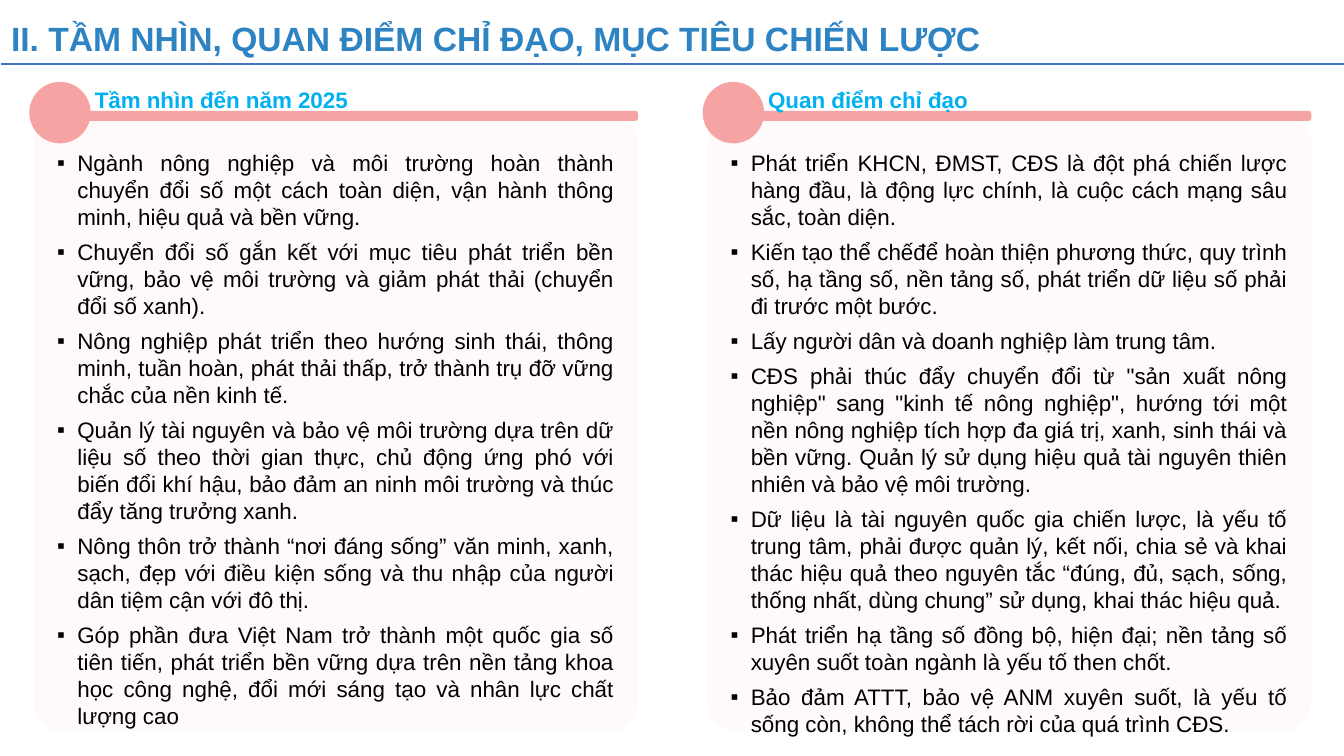
from lxml import etree
from pptx import Presentation
from pptx.dml.color import RGBColor
from pptx.enum.shapes import MSO_CONNECTOR, MSO_SHAPE
from pptx.enum.text import MSO_ANCHOR, MSO_AUTO_SIZE, PP_ALIGN
from pptx.oxml.ns import qn
from pptx.util import Pt

ROUNDED, OVAL = MSO_SHAPE.ROUNDED_RECTANGLE, MSO_SHAPE.OVAL
STRAIGHT = MSO_CONNECTOR.STRAIGHT
MIDDLE, TOP = MSO_ANCHOR.MIDDLE, MSO_ANCHOR.TOP
LEFT, JUSTIFY = PP_ALIGN.LEFT, PP_ALIGN.JUSTIFY
FIXED, GROW = MSO_AUTO_SIZE.NONE, MSO_AUTO_SIZE.SHAPE_TO_FIT_TEXT

COLORS = {
    "title": "2E83C3",
    "rule": "4472C4",
    "panel": "FFFAFA",
    "accent": "F5A3A3",
    "heading": "00B0F0",
    "body": "000000",
}
FONTS = {
    "title": {"name": "Arial", "size": Pt(24), "bold": True},
    "heading": {"name": "Arial", "size": Pt(16), "bold": True},
    "body": {"name": "Arial", "size": Pt(16), "bold": False},
}
NO_MARGINS = dict.fromkeys(("margin_left", "margin_top", "margin_right", "margin_bottom"), 0)

SLIDE_WIDTH, SLIDE_HEIGHT = 960, 540
TITLE = "II. TẦM NHÌN, QUAN ĐIỂM CHỈ ĐẠO, MỤC TIÊU CHIẾN LƯỢC"
COLUMN_LEFT, COLUMN_TOP, COLUMN_WIDTH, COLUMN_HEIGHT = 20.9, 58.5, 434.9, 464.2
COLUMN_STEP = 481
COLUMNS = [
    ("Tầm nhìn đến năm 2025", [
        "Ngành nông nghiệp và môi trường hoàn thành chuyển đổi số một cách toàn diện, vận hành thông minh, hiệu quả và bền vững.",
        "Chuyển đổi số gắn kết với mục tiêu phát triển bền vững, bảo vệ môi trường và giảm phát thải (chuyển đổi số xanh).",
        "Nông nghiệp phát triển theo hướng sinh thái, thông minh, tuần hoàn, phát thải thấp, trở thành trụ đỡ vững chắc của nền kinh tế.",
        "Quản lý tài nguyên và bảo vệ môi trường dựa trên dữ liệu số theo thời gian thực, chủ động ứng phó với biến đổi khí hậu, bảo đảm an ninh môi trường và thúc đẩy tăng trưởng xanh.",
        "Nông thôn trở thành “nơi đáng sống” văn minh, xanh, sạch, đẹp với điều kiện sống và thu nhập của người dân tiệm cận với đô thị.",
        "Góp phần đưa Việt Nam trở thành một quốc gia số tiên tiến, phát triển bền vững dựa trên nền tảng khoa học công nghệ, đổi mới sáng tạo và nhân lực chất lượng cao",
    ]),
    ("Quan điểm chỉ đạo", [
        "Phát triển KHCN, ĐMST, CĐS là đột phá chiến lược hàng đầu, là động lực chính, là cuộc cách mạng sâu sắc, toàn diện.",
        "Kiến tạo thể chếđể hoàn thiện phương thức, quy trình số, hạ tầng số, nền tảng số, phát triển dữ liệu số phải đi trước một bước.",
        "Lấy người dân và doanh nghiệp làm trung tâm.",
        "CĐS phải thúc đẩy chuyển đổi từ \"sản xuất nông nghiệp\" sang \"kinh tế nông nghiệp\", hướng tới một nền nông nghiệp tích hợp đa giá trị, xanh, sinh thái và bền vững. Quản lý sử dụng hiệu quả tài nguyên thiên nhiên và bảo vệ môi trường.",
        "Dữ liệu là tài nguyên quốc gia chiến lược, là yếu tố trung tâm, phải được quản lý, kết nối, chia sẻ và khai thác hiệu quả theo nguyên tắc “đúng, đủ, sạch, sống, thống nhất, dùng chung” sử dụng, khai thác hiệu quả.",
        "Phát triển hạ tầng số đồng bộ, hiện đại; nền tảng số xuyên suốt toàn ngành là yếu tố then chốt.",
        "Bảo đảm ATTT, bảo vệ ANM xuyên suốt, là yếu tố sống còn, không thể tách rời của quá trình CĐS.",
    ]),
]


def set_values(target, values):
    for name, value in values.items():
        setattr(target, name, value)


def write_paragraph(paragraph, text, style, **layout):
    paragraph.text = text
    set_values(paragraph, layout)
    set_values(paragraph.font, FONTS[style])
    paragraph.font.color.rgb = RGBColor.from_string(COLORS[style])


def add_bullet(paragraph):
    properties = paragraph._p.get_or_add_pPr()
    properties.set("marL", str(Pt(14.4)))
    properties.set("indent", str(-Pt(14.4)))
    etree.SubElement(properties, qn("a:buFont")).set("typeface", "Arial")
    etree.SubElement(properties, qn("a:buChar")).set("char", "▪")


def add_filled(slide, kind, color, left, top, width, height, rounding=None):
    shape = slide.shapes.add_shape(kind, Pt(left), Pt(top), Pt(width), Pt(height))
    shape.shadow.inherit = False
    shape.fill.solid()
    shape.fill.fore_color.rgb = RGBColor.from_string(COLORS[color])
    shape.line.fill.background()
    if rounding is not None:
        shape.adjustments[0] = rounding


def add_text_frame(slide, left, top, width, height, **settings):
    box = slide.shapes.add_textbox(Pt(left), Pt(top), Pt(width), Pt(height))
    set_values(box.text_frame, {"word_wrap": True, "vertical_anchor": TOP, **settings})
    return box.text_frame


def add_header(slide, left, top, width, height):
    title = slide.shapes.title
    set_values(title, {"left": Pt(left), "top": Pt(top), "width": Pt(898), "height": Pt(height)})
    set_values(title.text_frame, {"vertical_anchor": MIDDLE, "word_wrap": True, "auto_size": FIXED})
    write_paragraph(title.text_frame.paragraphs[0], TITLE, "title", alignment=LEFT, line_spacing=0.9)
    rule_top = Pt(top + height + 0.7)
    rule = slide.shapes.add_connector(STRAIGHT, Pt(left), rule_top, Pt(left + width), rule_top)
    rule.line.color.rgb = RGBColor.from_string(COLORS["rule"])
    rule.line.width = Pt(1.5)
    etree.SubElement(rule._element.spPr, qn("a:effectLst"))


def add_column(slide, heading, points, left, top, width, height):
    panel_left, panel_width = left + 2.9, width - 2.9
    add_filled(slide, ROUNDED, "panel", panel_left, top + 22.9, panel_width, height - 22.9, 0.05)
    add_filled(slide, ROUNDED, "accent", panel_left, top + 20.7, panel_width, 7.2, 0.3)
    add_filled(slide, OVAL, "accent", left, top, 43.9, 43.9)

    heading_frame = add_text_frame(slide, left + 46.8, top + 1.3, 220, 21.6, **NO_MARGINS)
    write_paragraph(heading_frame.paragraphs[0], heading, "heading", alignment=LEFT, line_spacing=Pt(21))

    body = add_text_frame(slide, left + 12.9, top + 44.5, 411.8, height - 38, auto_size=GROW)
    for index, point in enumerate(points):
        paragraph = body.add_paragraph() if index else body.paragraphs[0]
        add_bullet(paragraph)
        write_paragraph(paragraph, point, "body", alignment=JUSTIFY, space_before=Pt(6 if index else 0))


def main():
    presentation = Presentation()
    set_values(presentation, {"slide_width": Pt(SLIDE_WIDTH), "slide_height": Pt(SLIDE_HEIGHT)})
    slide = presentation.slides.add_slide(presentation.slide_layouts.get_by_name("Title Only"))
    add_header(slide, 0.7, 12.2, SLIDE_WIDTH - 0.7, 33.1)
    for index, (heading, points) in enumerate(COLUMNS):
        add_column(slide, heading, points, COLUMN_LEFT + index * COLUMN_STEP,
                   COLUMN_TOP, COLUMN_WIDTH, COLUMN_HEIGHT)
    presentation.save("out.pptx")


if __name__ == "__main__":
    main()
